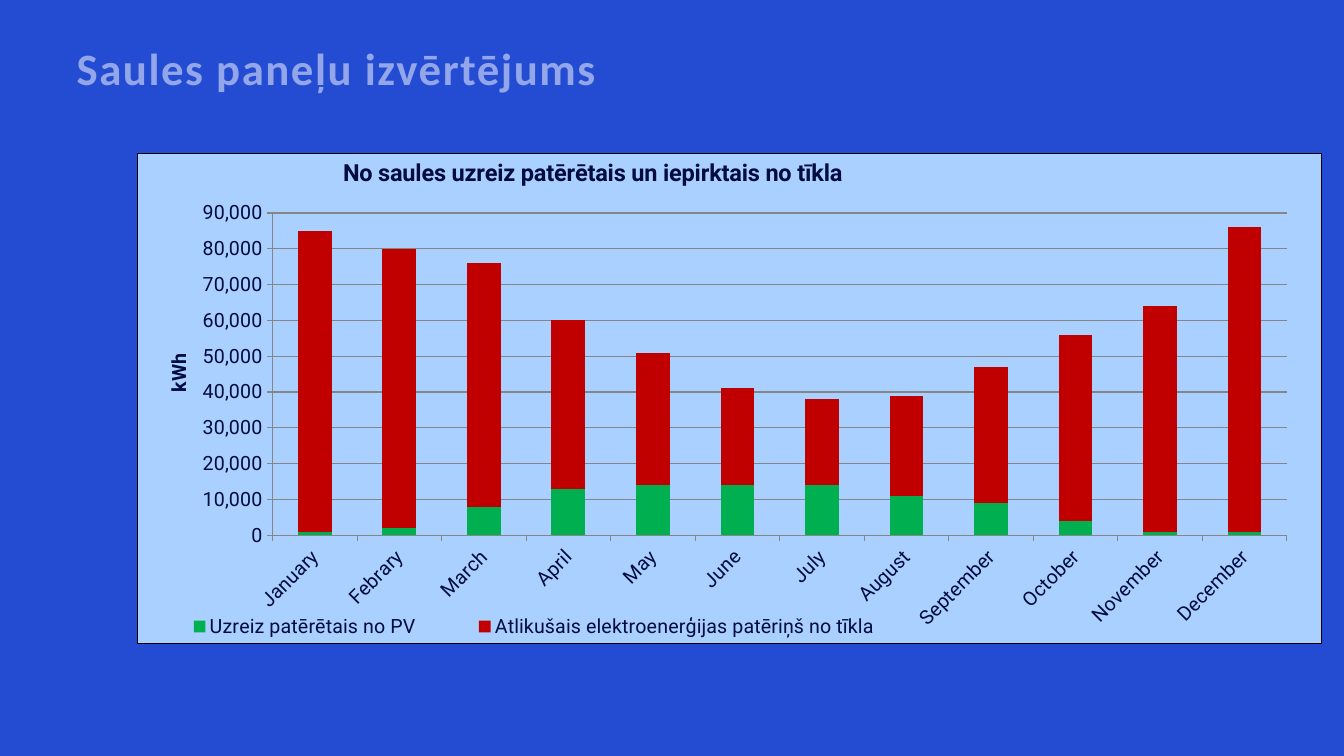
import pptx
import pptx.chart.data
import pptx.dml.color
import pptx.enum.chart
import pptx.enum.text
import pptx.oxml
import pptx.oxml.ns
import pptx.util
from lxml import etree

Inches = pptx.util.Inches
Pt = pptx.util.Pt
RGBColor = pptx.dml.color.RGBColor
qn = pptx.oxml.ns.qn

# Content
HEADING = "Saules paneļu izvērtējums"
CHART_TITLE = "No saules uzreiz patērētais un iepirktais no tīkla"
UNIT = "kWh"
MONTHS = ["January", "Febrary", "March", "April", "May", "June", "July",
          "August", "September", "October", "November", "December"]
BACKGROUND = RGBColor(0x24, 0x4C, 0xD3)
PALE_BLUE = RGBColor(0x92, 0xA6, 0xE9)  # half white, half background
NAVY = RGBColor(0x00, 0x0B, 0x40)
GRID = RGBColor(0x86, 0x86, 0x86)
GREEN = RGBColor(0x00, 0xB0, 0x50)
RED = RGBColor(0xC0, 0x00, 0x00)
PANEL = RGBColor(0xAA, 0xD0, 0xFF)
BORDER = RGBColor(0x00, 0x00, 0x00)
CONSUMPTION = [
    ("Uzreiz patērētais no PV", GREEN,
     [1000, 2000, 8000, 13000, 14000, 14000, 14000, 11000, 9000, 4000, 1000, 1000]),
    ("Atlikušais elektroenerģijas patēriņš no tīkla", RED,
     [84000, 78000, 68000, 47000, 37000, 27000, 24000, 28000, 38000, 52000, 63000, 85000]),
]


def add_text(frame, text, font_name, size, color):
    run = frame.paragraphs[0].add_run()
    run.text = text
    run.font.name = font_name
    run.font.size = Pt(size)
    run.font.bold = True
    run.font.color.rgb = color
    return run


def place(part, index, inner=False, **fractions):
    """Give a chart part a manual layout, in fractions of the chart."""
    for old in part.findall(qn("c:layout")):
        part.remove(old)
    layout = etree.Element(qn("c:layout"))
    manual = etree.SubElement(layout, qn("c:manualLayout"))
    settings = {"layoutTarget": "inner"} if inner else {}
    settings.update(xMode="edge", yMode="edge", **fractions)
    for tag, value in settings.items():
        etree.SubElement(manual, qn("c:" + tag)).set("val", str(value))
    part.insert(index, layout)


def panel_format(line):
    return pptx.oxml.parse_xml(
        f'<c:spPr {pptx.oxml.ns.nsdecls("c", "a")}><a:solidFill>'
        f'<a:srgbClr val="{PANEL}"/></a:solidFill>{line}</c:spPr>')


# Slide
deck = pptx.Presentation()
deck.slide_width, deck.slide_height = Inches(13.33), Inches(7.5)
slide = deck.slides.add_slide(deck.slide_layouts[6])
slide.background.fill.solid()
slide.background.fill.fore_color.rgb = BACKGROUND

# Heading, in an opaque tint so that every letter is drawn in full
heading = slide.shapes.add_textbox(Inches(0.76), Inches(0.46), Inches(6.64), Inches(0.53))
frame = heading.text_frame
frame.word_wrap = True
frame.margin_left = frame.margin_right = frame.margin_top = frame.margin_bottom = 0
frame.paragraphs[0].line_spacing = 0.9
heading_run = add_text(frame, HEADING, "Calibri", 32, PALE_BLUE)
heading_run.font._element.set("spc", "110")

# Stacked columns
data = pptx.chart.data.CategoryChartData(number_format="#,##0")
data.categories = MONTHS
for name, color, values in CONSUMPTION:
    data.add_series(name, values)
chart = slide.shapes.add_chart(
    pptx.enum.chart.XL_CHART_TYPE.COLUMN_STACKED,
    Inches(1.36), Inches(1.52), Inches(11.75), Inches(4.87), data).chart
chart.font.name = "Roboto"
chart.font.size = Pt(14)
chart.font.color.rgb = NAVY
columns = chart.plots[0]
columns.gap_width, columns.overlap = 150, 100
columns.vary_by_categories = False
for series, (name, color, values) in zip(columns.series, CONSUMPTION):
    series.format.fill.solid()
    series.format.fill.fore_color.rgb = color
    series.invert_if_negative = False

# Axes
months, energy = chart.category_axis, chart.value_axis
for axis in (months, energy):
    axis.major_tick_mark = pptx.enum.chart.XL_TICK_MARK.OUTSIDE
    axis.minor_tick_mark = pptx.enum.chart.XL_TICK_MARK.NONE
    axis.format.line.color.rgb = GRID
    axis.format.line.width = Pt(0.75)
    axis.tick_labels.font.size = Pt(14)
months_text = months._element.find(qn("c:txPr"))
months_text.find(qn("a:bodyPr")).set("rot", "-2700000")
energy.minimum_scale, energy.maximum_scale, energy.major_unit = 0, 90000, 10000
energy.tick_labels.number_format = "#,##0"
energy.tick_labels.number_format_is_linked = False
energy.has_major_gridlines = True
energy.major_gridlines.format.line.color.rgb = GRID
energy.major_gridlines.format.line.width = Pt(0.75)
unit_frame = energy.axis_title.text_frame
add_text(unit_frame, UNIT, "Roboto", 14, NAVY)
unit_frame._element.find(qn("a:bodyPr")).set("rot", "-5400000")
place(energy.axis_title._element, 1, x=0.02, y=0.4)

# Chart title and legend
chart.has_title = True
add_text(chart.chart_title.text_frame, CHART_TITLE, "Roboto", 16.8, NAVY)
title = chart.chart_title._element
title.find(qn("c:overlay")).set("val", "1")
place(title, 1, x=0.17, y=0)
chart.has_legend = True
chart.legend.position = pptx.enum.chart.XL_LEGEND_POSITION.BOTTOM
chart.legend.include_in_layout = False
chart.legend.font.size = Pt(14)
place(chart.legend._element, 1, x=0, y=0.93, w=0.67, h=0.07)

# Panel behind the columns
space = chart._chartSpace
plot_area = space.find(".//" + qn("c:plotArea"))
place(plot_area, 0, inner=True, x=0.114, y=0.121, w=0.857, h=0.658)
plot_area.append(panel_format("<a:ln><a:noFill/></a:ln>"))
space.find(qn("c:chart")).addnext(panel_format(
    f'<a:ln w="{Pt(0.75)}"><a:solidFill><a:srgbClr val="{BORDER}"/></a:solidFill></a:ln>'))

deck.save("out.pptx")
